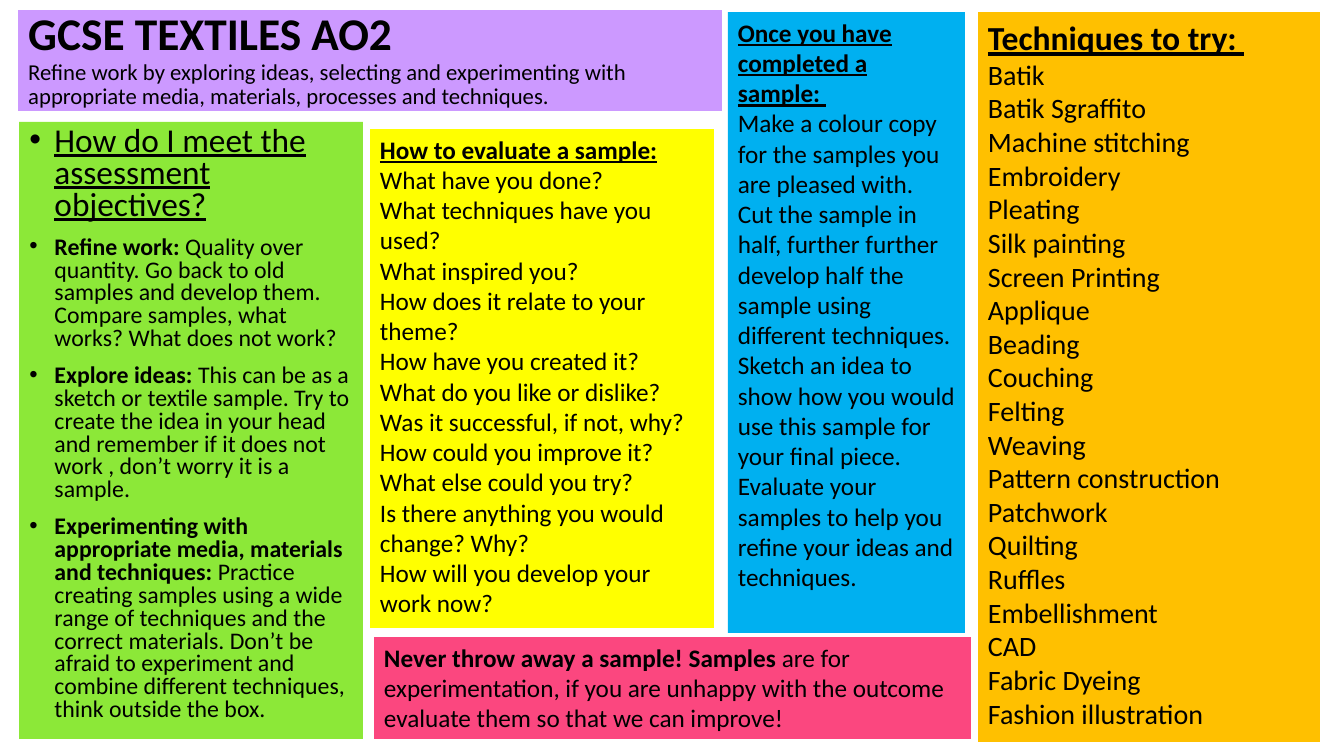
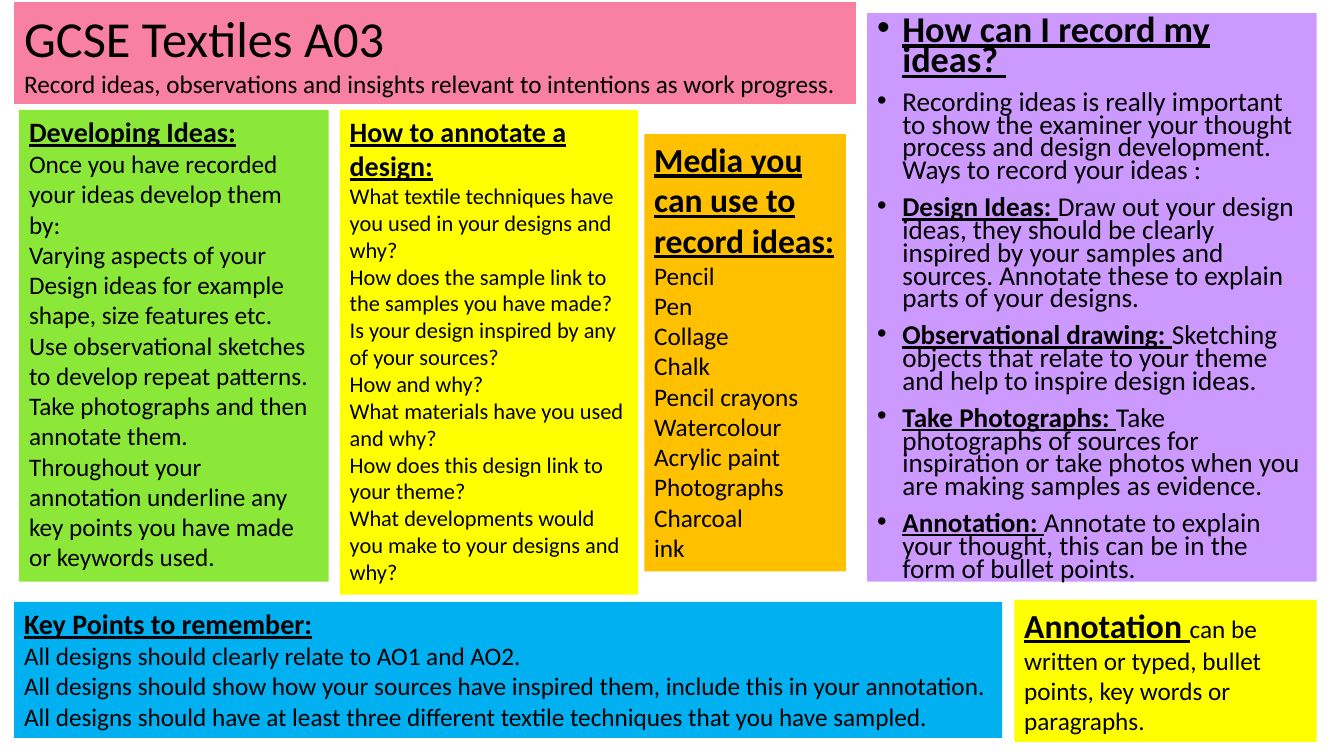
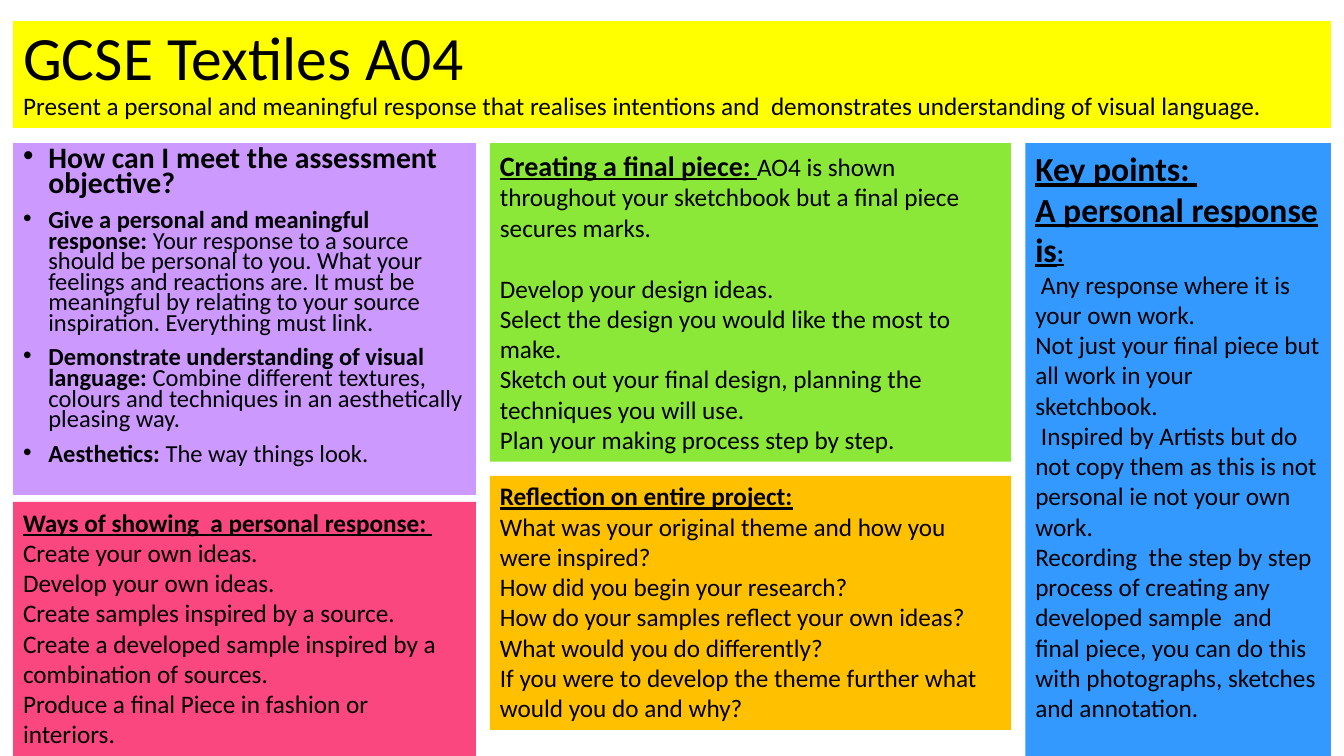
from dataclasses import dataclass

from pptx import Presentation
from pptx.dml.color import RGBColor
from pptx.enum.text import MSO_ANCHOR as Anchor, MSO_AUTO_SIZE as AutoSize, PP_ALIGN as Align
from pptx.util import Inches, Pt

# Shared palette
BLACK = "000000"
LILAC = "CC99FF"
GREEN = "8CE838"
YELLOW = "FFFF00"
SKY = "00B0F0"
BLUE = "3399FF"
PINK = "FB477F"
ROSE = "F880A2"
AMBER = "FFC000"


def color(hex_string):
    return RGBColor.from_string(hex_string)


@dataclass
class Part:
    """A stretch of text that differs from its panel's plain text."""
    text: str
    size: float = None
    bold: bool = True
    underline: bool = False


def heading(text, size=None):
    return Part(text, size, underline=True)


class Poster:
    """Holds the shared style and the slide being filled."""
    font = "Calibri"
    bullet_indent = Inches(0.25)

    def __init__(self):
        self.presentation = Presentation()
        self.presentation.slide_width = Inches(13.33)
        self.presentation.slide_height = Inches(7.5)
        self.slide = None

    def new_slide(self):
        layout = self.presentation.slide_layouts[1]
        self.slide = self.presentation.slides.add_slide(layout)

    def place(self, shape, at, fill, anchor=Anchor.TOP):
        shape.left, shape.top, shape.width, shape.height = map(Inches, at)
        shape.fill.solid()
        shape.fill.fore_color.rgb = color(fill)
        frame = shape.text_frame
        frame.word_wrap = True
        frame.auto_size = AutoSize.NONE
        frame.vertical_anchor = anchor

    def fill_text(self, shape, lines, size, spacing=1.0, before=0):
        """Each line is a string, a Part, or a list of both."""
        frame = shape.text_frame
        frame.text = "\n" * (len(lines) - 1)
        for paragraph, line in zip(frame.paragraphs, lines):
            paragraph.alignment = Align.LEFT
            paragraph.line_spacing = spacing
            paragraph.space_before = Pt(before)
            for part in line if isinstance(line, list) else [line]:
                if isinstance(part, str):
                    part = Part(part, bold=False)
                run = paragraph.add_run()
                run.text = part.text
                run.font.name = self.font
                run.font.size = Pt(part.size or size)
                run.font.bold = part.bold
                run.font.underline = part.underline
                run.font.color.rgb = color(BLACK)

    def title(self, at, fill, name, objective, size, spacing=0.9):
        shape = self.slide.shapes.title
        self.place(shape, at, fill, Anchor.MIDDLE)
        self.fill_text(shape, [name, objective], size, spacing)

    def bullets(self, at, fill, lines, size, spacing):
        shape = self.slide.placeholders[1]
        self.place(shape, at, fill)
        self.fill_text(shape, lines, size, spacing, before=10)
        for paragraph in shape.text_frame.paragraphs:
            properties = paragraph._p.get_or_add_pPr()
            properties.set("marL", str(self.bullet_indent))
            properties.set("indent", str(-self.bullet_indent))

    def panel(self, at, fill, lines, size=18):
        shape = self.slide.shapes.add_textbox(*map(Inches, at))
        self.place(shape, at, fill)
        self.fill_text(shape, lines, size)
        return shape


def experiment_slide(poster):
    poster.new_slide()
    poster.title(
        (0.18, 0.1, 6.98, 1), LILAC, Part("GCSE TEXTILES AO2", 32.4),
        "Refine work by exploring ideas, selecting and experimenting with "
        "appropriate media, materials, processes and techniques.", 16.2)
    poster.bullets((0.19, 1.21, 3.41, 6.12), GREEN, [
        Part("How do I meet the assessment objectives?", 23.8, bold=False, underline=True),
        [Part("Refine work: "),
         "Quality over quantity. Go back to old samples and develop them. "
         "Compare samples, what works? What does not work?"],
        [Part("Explore ideas: "),
         "This can be as a sketch or textile sample. Try to create the idea in your head "
         "and remember if it does not work , don’t worry it is a sample."],
        [Part("Experimenting with appropriate media, materials and techniques: "),
         "Practice creating samples using a wide range of techniques and the correct "
         "materials. Don’t be afraid to experiment and combine different techniques, "
         "think outside the box."],
    ], size=17, spacing=0.8)
    poster.panel((3.67, 1.28, 3.41, 4.95), YELLOW, [
        heading("How to evaluate a sample:"),
        "What have you done?",
        "What techniques have you used?",
        "What inspired you?",
        "How does it relate to your theme?",
        "How have you created it?",
        "What do you like or dislike?",
        "Was it successful, if not, why?",
        "How could you improve it?",
        "What else could you try?",
        "Is there anything you would change? Why?",
        "How will you develop your work now?",
    ])
    poster.panel((7.22, 0.12, 2.35, 6.16), SKY, [
        heading("Once you have completed a sample: "),
        "Make a colour copy for the samples you are pleased with.",
        "Cut the sample in half, further further develop half the sample using "
        "different techniques.",
        "Sketch an idea to show how you would use this sample for your final piece.",
        "Evaluate your samples to help you refine your ideas and techniques.",
    ])
    poster.panel((3.71, 6.32, 5.92, 1.01), PINK, [
        [Part("Never throw away a sample! Samples"),
         " are for experimentation, if you are unhappy with the outcome evaluate them "
         "so that we can improve!"],
    ])
    poster.panel((9.7, 0.12, 3.39, 7.24), AMBER, [
        heading("Techniques to try: ", 24),
        "Batik", "Batik Sgraffito", "Machine stitching", "Embroidery", "Pleating",
        "Silk painting", "Screen Printing", "Applique", "Beading", "Couching",
        "Felting", "Weaving", "Pattern construction", "Patchwork", "Quilting",
        "Ruffles", "Embellishment", "CAD", "Fabric Dyeing", "Fashion illustration",
    ], size=20)


def record_slide(poster):
    poster.new_slide()
    poster.title(
        (0.14, 0.02, 8.35, 1.01), ROSE, Part("GCSE Textiles A03", 36, bold=False),
        "Record ideas, observations and insights relevant to intentions as work progress.",
        18, spacing=1.0)
    poster.bullets((8.6, 0.13, 4.46, 5.64), LILAC, [
        heading("How can I record my ideas? ", 25.9),
        "Recording ideas is really important to show the examiner your thought process "
        "and design development. Ways to record your ideas :",
        [heading("Design Ideas: "),
         "Draw out your design ideas, they should be clearly inspired by your samples "
         "and sources. Annotate these to explain parts of your designs."],
        [heading("Observational drawing: "),
         "Sketching objects that relate to your theme and help to inspire design ideas."],
        [heading("Take Photographs: "),
         "Take photographs of sources for inspiration or take photos when you are making "
         "samples as evidence."],
        [heading("Annotation: "),
         "Annotate to explain your thought, this can be in the form of bullet points."],
    ], size=19.4, spacing=0.7)
    poster.panel((3.37, 1.09, 2.96, 4.81), YELLOW, [
        heading("How to annotate a design:", 20),
        "What textile techniques have you used in your designs and why?",
        "How does the sample link to the samples you have made?",
        "Is your design inspired by any of your sources?",
        "How and why?",
        "What materials have you used and why?",
        "How does this design link to your theme?",
        "What developments would you make to your designs and why?",
    ], size=16)
    poster.panel((0.19, 1.09, 3.07, 4.68), GREEN, [
        heading("Developing Ideas:", 20),
        "Once you have recorded your ideas develop them by:",
        "Varying aspects of your Design ideas for example shape, size features etc.",
        "Use observational sketches to develop repeat patterns.",
        "Take photographs and then annotate them.",
        "Throughout your annotation underline any key points you have made or "
        "keywords used.",
    ])
    poster.panel((0.14, 5.97, 9.8, 1.35), SKY, [
        heading("Key Points to remember:", 20),
        "All designs should clearly relate to AO1 and AO2.",
        "All designs should show how your sources have inspired them, include this in "
        "your annotation.",
        "All designs should have at least three different textile techniques that you "
        "have sampled.",
    ])
    poster.panel((6.39, 1.33, 2, 4.34), AMBER, [
        heading("Media you can use to record ideas:", 24),
        "Pencil", "Pen", "Collage", "Chalk", "Pencil crayons", "Watercolour",
        "Acrylic paint", "Photographs", "Charcoal", "ink",
    ])
    poster.panel((10.06, 5.95, 3, 1.41), YELLOW, [
        [heading("Annotation ", 24),
         "can be written or typed, bullet points, key words or paragraphs."],
    ])


def respond_slide(poster):
    poster.new_slide()
    poster.title(
        (0.13, 0.21, 13.07, 1.06), YELLOW, Part("GCSE Textiles A04", 44, bold=False),
        "Present a personal and meaningful response that realises intentions and  "
        "demonstrates understanding of visual language.", 18)
    poster.bullets((0.13, 1.42, 4.59, 3.49), LILAC, [
        Part("How can I meet the assessment objective?", 21.2),
        [Part("Give a personal and meaningful response: "),
         "Your response to a source should be personal to you. What your feelings and "
         "reactions are. It must be meaningful by relating to your source inspiration. "
         "Everything must link."],
        [Part("Demonstrate understanding of visual language: "),
         "Combine different textures, colours and techniques in an aesthetically "
         "pleasing way."],
        [Part("Aesthetics: "), "The way things look."],
    ], size=17.5, spacing=0.7)
    final_piece = poster.panel((4.86, 1.42, 5.17, 3.16), GREEN, [
        [heading("Creating a final piece: ", 20),
         "AO4 is shown throughout your sketchbook but a final piece secures marks."],
        "Develop your design ideas.",
        "Select the design you would like the most to make.",
        "Sketch out your final design, planning the techniques you will use.",
        "Plan your making process step by step.",
    ])
    # One line of space between the introduction and the steps
    final_piece.text_frame.paragraphs[1].space_before = Pt(22)
    poster.panel((0.13, 4.98, 4.59, 2.52), PINK, [
        heading("Ways of showing  a personal response: "),
        "Create your own ideas.",
        "Develop your own ideas.",
        "Create samples inspired by a source.",
        "Create a developed sample inspired by a combination of sources.",
        "Produce a final Piece in fashion or interiors.",
    ])
    poster.panel((10.17, 1.42, 3.03, 6.08), BLUE, [
        heading("Key points: ", 24),
        [heading("A personal response is", 24), heading(":")],
        " Any response where it is your own work.",
        "Not just your final piece but all work in your sketchbook.",
        " Inspired by Artists but do not copy them as this is not personal ie not your "
        "own work.",
        "Recording  the step by step process of creating any developed sample  and final "
        "piece, you can do this with photographs, sketches and annotation.",
    ])
    poster.panel((4.86, 4.72, 5.17, 2.52), AMBER, [
        heading("Reflection on entire project:"),
        "What was your original theme and how you were inspired?",
        "How did you begin your research?",
        "How do your samples reflect your own ideas?",
        "What would you do differently?",
        "If you were to develop the theme further what would you do and why?",
    ])


def main():
    poster = Poster()
    experiment_slide(poster)
    record_slide(poster)
    respond_slide(poster)
    poster.presentation.save("out.pptx")


if __name__ == "__main__":
    main()
